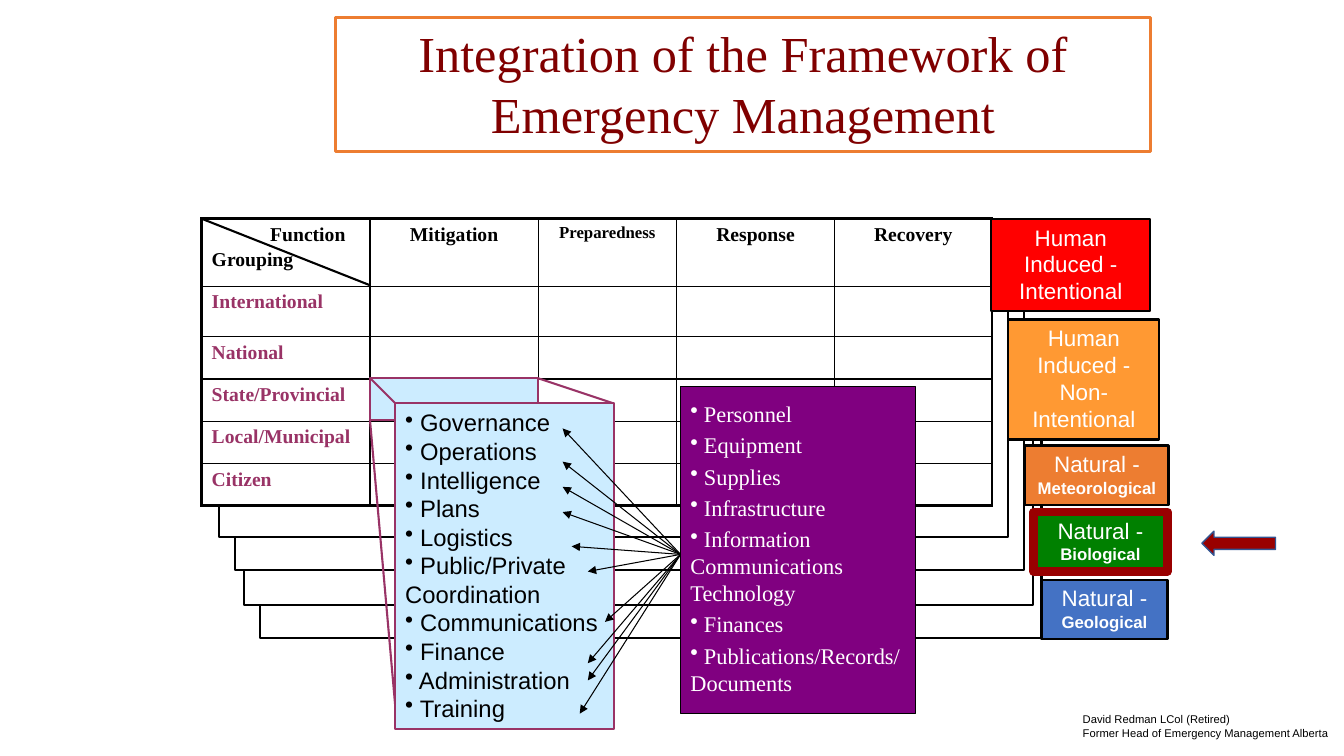
from dataclasses import dataclass
from typing import Any, Optional

from pptx import Presentation, util as u
from pptx.dml import color
from pptx.enum import shapes, text
from pptx.oxml import xmlchemy as xml

PX = 9144  # 100 px to the inch
INK = {
    "black": "000000", "white": "FFFFFF", "maroon": "800000",
    "plum": "993366", "sky": "CCECFF", "purple": "800080",
    "red": "FF0000", "amber": "FF9933", "orange": "ED7D31",
    "green": "008000", "blue": "4472C4", "brick": "990000", "navy": "325491",
}
SERIF, SANS = "Times New Roman", "Arial"


@dataclass(frozen=True)
class Font:
    name: str
    size: int
    ink: str = "black"
    bold: bool = False


@dataclass(frozen=True)
class Box:
    x: int
    y: int
    w: int
    h: int
    fill: Optional[str] = "white"
    edge: str = "black"
    pen: float = 1.5


@dataclass(frozen=True)
class Hazard:
    box: Box
    head: str
    kind: str = ""


def rgb(ink: str) -> color.RGBColor:
    return color.RGBColor.from_string(INK[ink])


def node(home: Any, tag: str, **attrs: str) -> Any:
    item = xml.OxmlElement(tag)
    for key, val in attrs.items():
        item.set(key, val)
    home.append(item)
    return item


def place(shape: Any, box: Box) -> None:
    shape.left, shape.top = box.x * PX, box.y * PX
    shape.width, shape.height = box.w * PX, box.h * PX


def paint(shape: Any, box: Box) -> None:
    if box.fill:
        shape.fill.solid()
        shape.fill.fore_color.rgb = rgb(box.fill)
    else:
        shape.fill.background()
    shape.line.color.rgb = rgb(box.edge)
    shape.line.width = u.Pt(box.pen)


def draw(home: Any, box: Box, kind: Any = shapes.MSO_SHAPE.RECTANGLE) -> Any:
    shape = home.add_shape(kind, 0, 0, 0, 0)
    place(shape, box)
    paint(shape, box)
    shape.shadow.inherit = False
    return shape


def line(home: Any, a: tuple[int, int], b: tuple[int, int], ink: str = "black",
         pen: float = 1.5, head: bool = False) -> None:
    link = home.add_connector(shapes.MSO_CONNECTOR.STRAIGHT,
                              *(n * PX for n in a + b))
    link.line.color.rgb = rgb(ink)
    link.line.width = u.Pt(pen)
    props = link._element.spPr
    if head:
        node(props.get_or_add_ln(), "a:tailEnd", type="triangle")
    node(props, "a:effectLst")


def write(frame: Any, paras: list[list[tuple[str, Font]]], align: Any = None,
          gap: float = 0, bullet: bool = False) -> None:
    frame.word_wrap = True
    frame.vertical_anchor = text.MSO_ANCHOR.TOP
    for i, runs in enumerate(paras):
        para = frame.paragraphs[0] if i == 0 else frame.add_paragraph()
        para.alignment = align or text.PP_ALIGN.LEFT
        if i and gap:
            para.space_before = u.Pt(gap)
        if bullet:
            props = para._p.get_or_add_pPr()
            props.set("marL", "0")
            props.set("indent", "0")
            node(props, "a:buChar", char="•")
        for words, font in runs:
            run = para.add_run()
            run.text = words
            run.font.name, run.font.size = font.name, u.Pt(font.size)
            run.font.bold = font.bold
            run.font.color.rgb = rgb(font.ink)


def rule(cell: Any, pens: dict[str, float]) -> None:
    props = cell._tc.get_or_add_tcPr()
    for i, (side, pen) in enumerate(pens.items()):
        edge = xml.OxmlElement("a:ln" + side)
        edge.set("w", str(u.Pt(pen)))
        node(node(edge, "a:solidFill"), "a:srgbClr", val=INK["black"])
        props.insert(i, edge)


def grid(home: Any) -> None:
    cols, rows = [167, 167, 137, 157, 156], [67, 50, 42, 42, 42, 42]
    heads = ["Mitigation", "Preparedness", "Response", "Recovery"]
    groups = ["International", "National", "State/Provincial",
              "Local/Municipal", "Citizen"]
    table = home.add_table(len(rows), len(cols), 200 * PX, 217 * PX,
                           sum(cols) * PX, sum(rows) * PX).table
    table.first_row = table.horz_banding = False
    for col, wide in zip(table.columns, cols):
        col.width = wide * PX
    for row, tall in zip(table.rows, rows):
        row.height = tall * PX
    for r in range(len(rows)):
        for c in range(len(cols)):
            cell = table.cell(r, c)
            cell.fill.solid()
            cell.fill.fore_color.rgb = rgb("white")
            ends = {"L": c == 0, "R": c == len(cols) - 1,
                    "T": r == 0, "B": r == len(rows) - 1}
            rule(cell, {side: 2.25 if end else 1 for side, end in ends.items()})
    bold = Font(SERIF, 14, bold=True)
    corner = table.cell(0, 0)
    write(corner.text_frame, [[("Function", bold)], [("Grouping", bold)]], gap=2.8)
    corner.text_frame.paragraphs[0]._p.get_or_add_pPr().set("marL", str(58 * PX))
    for c, name in enumerate(heads, 1):
        font = Font(SERIF, 12 if name == "Preparedness" else 14, bold=True)
        write(table.cell(0, c).text_frame, [[(name, font)]], text.PP_ALIGN.CENTER)
    for r, name in enumerate(groups, 1):
        write(table.cell(r, 0).text_frame, [[(name, Font(SERIF, 14, "plum", True))]])
    line(home, (200, 217), (367, 283))


def label(home: Any, item: Hazard) -> None:
    runs = [(item.head, Font(SANS, 16, "white"))]
    if item.kind:
        runs.append((item.kind, Font(SANS, 12, "white", True)))
    write(draw(home, item.box).text_frame, [runs], text.PP_ALIGN.CENTER)


HAZARDS = [
    Hazard(Box(983, 217, 158, 92, "red"), "Human Induced - Intentional"),
    Hazard(Box(1000, 317, 150, 119, "amber"), "Human Induced - Non-Intentional"),
    Hazard(Box(1017, 442, 142, 59, "orange"), "Natural - ", "Meteorological"),
    Hazard(Box(1025, 508, 133, 59, "green", "brick", 6), "Natural - ", "Biological"),
    Hazard(Box(1033, 575, 125, 59, "blue"), "Natural - ", "Geological"),
]
TASKS = ["Governance", "Operations", "Intelligence", "Plans", "Logistics",
         "Public/Private Coordination", "Communications", "Finance",
         "Administration", "Training"]
MEANS = ["Personnel", "Equipment", "Supplies", "Infrastructure",
         "Information Communications Technology", "Finances",
         "Publications/Records/ Documents"]
TIPS = [(558, 425), (558, 458), (558, 483), (558, 508), (567, 542),
        (583, 567), (600, 617), (583, 658), (583, 675), (575, 708)]


def main() -> None:
    deck = Presentation()
    deck.slide_width, deck.slide_height = 1333 * PX, 750 * PX
    slide = deck.slides.add_slide(deck.slide_layouts[5])
    pool = slide.shapes

    # Title
    frame = Box(333, 17, 808, 133, None, "orange", 2.25)
    place(pool.title, frame)
    paint(pool.title, frame)
    name = "Integration of the Framework of Emergency Management"
    write(pool.title.text_frame, [[(name, Font(SERIF, 36, "maroon"))]],
          text.PP_ALIGN.CENTER)

    # Stacked sheets and the front table
    for x, y, w in [(258, 350, 775), (242, 317, 783), (233, 283, 783), (217, 250, 783)]:
        draw(pool, Box(x, y, w, 283))
    grid(pool)

    # Hazards, with the raised task panel below the last one
    for item in HAZARDS[:-1]:
        label(pool, item)
    panel = pool.add_group_shape().shapes
    draw(panel, Box(367, 375, 167, 42, "sky", "plum"))
    for a, b in [((367, 417), (392, 700)), ((367, 375), (392, 400)),
                 ((533, 375), (608, 400))]:
        line(panel, a, b, "plum")
    card = draw(panel, Box(392, 400, 217, 323, "sky", "plum"))
    write(card.text_frame, [[(" " + task, Font(SANS, 17))] for task in TASKS],
          bullet=True)
    label(pool, HAZARDS[-1])

    # Resources and their arrows
    draw(pool, Box(675, 383, 233, 325, "purple", "black", 0.75))
    note = pool.add_textbox(675 * PX, 392 * PX, 242 * PX, 310 * PX)
    write(note.text_frame, [[(" " + item, Font(SERIF, 16, "white"))] for item in MEANS],
          gap=3.2, bullet=True)
    for tip in TIPS:
        line(pool, (675, 550), tip, pen=0.75, head=True)

    # Pointer and credit
    mark = draw(pool, Box(1192, 527, 73, 24, "brick", "navy", 1),
                shapes.MSO_SHAPE.RIGHT_ARROW)
    mark.rotation = 180
    sign = pool.add_textbox(1064 * PX, 702 * PX, 270 * PX, 37 * PX)
    write(sign.text_frame, [[(words, Font(SANS, 8))] for words in (
        "David Redman LCol (Retired)",
        "Former Head of Emergency Management Alberta")])
    deck.save("out.pptx")


if __name__ == "__main__":
    main()
